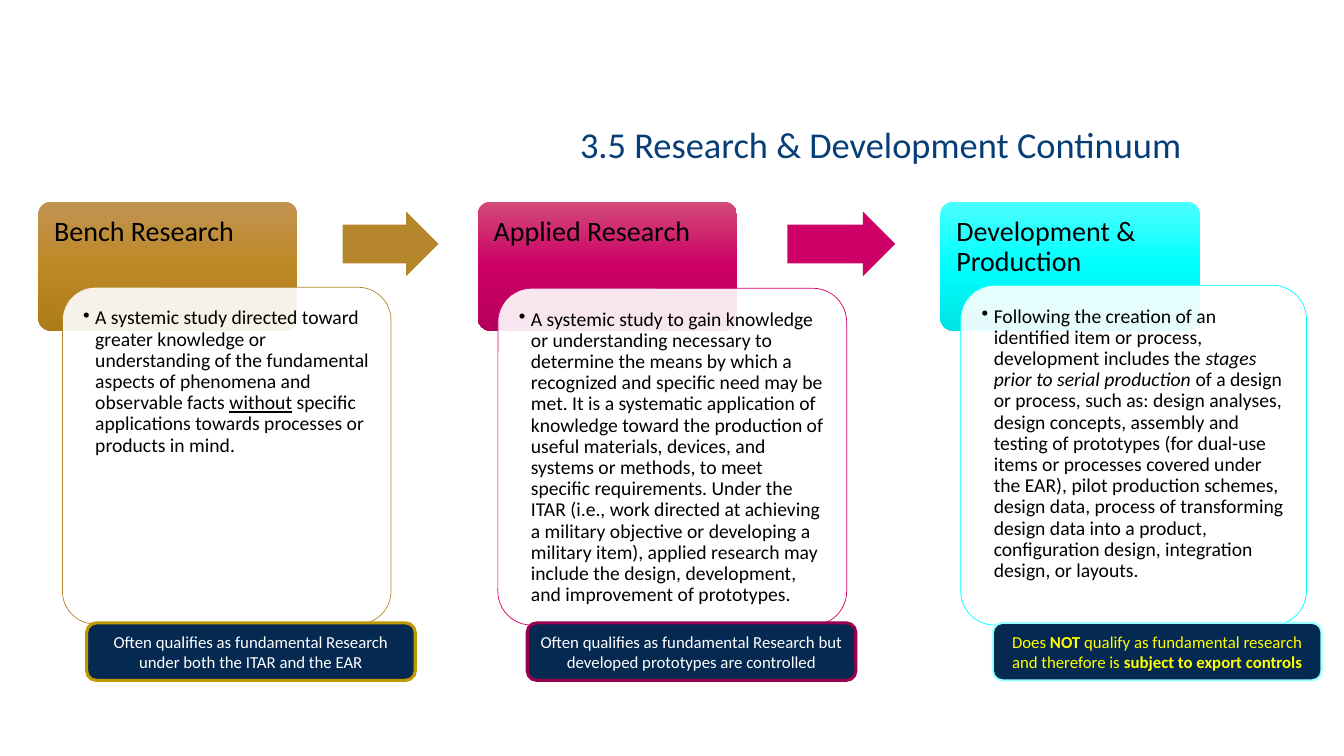
from dataclasses import dataclass
from typing import NamedTuple

from lxml import etree
from pptx import Presentation
from pptx import util as u
from pptx.dml.color import RGBColor
from pptx.enum import shapes, text
from pptx.oxml.ns import qn

SLIDE_W, SLIDE_H = u.Inches(13.33), u.Inches(7.5)
FONT = "Calibri"
BLACK, WHITE, NAVY, BLUE, YELLOW = "000000", "FFFFFF", "052950", "083E78", "FFFF00"
ROUND = shapes.MSO_SHAPE.ROUNDED_RECTANGLE
ARROW = shapes.MSO_SHAPE.RIGHT_ARROW


class Box(NamedTuple):
    """Left, top, width and height in percent of the slide."""
    left: float
    top: float
    width: float
    height: float


class Run(NamedTuple):
    text: str
    style: dict = {}


@dataclass
class Stage:
    title: str
    gradient: tuple[str, str, str]
    accent: str
    header_left: float
    body: Box
    details: list[Run]
    verdict_left: float
    verdict: list[Run]
    verdict_color: str
    verdict_line: str
    verdict_line_width: float
    arrow: tuple[float, float] | None = None


STAGES = [
    Stage(
        "Bench Research", ("C19453", "BD8825", "AE7B1B"), "B6862C",
        2.85, Box(4.65, 38, 24.45, 44.55),
        [Run("A systemic study directed toward greater knowledge or understanding of the "
             "fundamental aspects of phenomena and observable facts "),
         Run("without", {"underline": True}),
         Run(" specific applications towards processes or products in mind.")],
        6.45, [Run("Often qualifies as fundamental Research under both the ITAR and the EAR")],
        WHITE, "BF9900", 2.25, (25.5, 7.13)),
    Stage(
        "Applied Research", ("D34B79", "CC0066", "B5005B"), "CC0066",
        35.55, Box(37.05, 38.13, 25.95, 44.55),
        [Run("A systemic study to gain knowledge or understanding necessary to determine the "
             "means by which a recognized and specific need may be met. It is a systematic "
             "application of knowledge toward the production of useful materials, devices, and "
             "systems or methods, to meet specific requirements. Under the ITAR (i.e., work "
             "directed at achieving a military objective or developing a military item), applied "
             "research may include the design, development, and improvement of prototypes.")],
        39.23, [Run("Often qualifies as fundamental Research but developed prototypes are "
                    "controlled")],
        WHITE, "99004D", 2.25, (58.58, 8.03)),
    Stage(
        "Development & Production", ("4BFFFF", "00FFFF", "00E3E3"), "00FFFF",
        69.98, Box(71.48, 37.73, 25.73, 44.95),
        [Run("Following the creation of an identified item or process, development includes the "),
         Run("stages prior to serial production", {"italic": True}),
         Run(" of a design or process, such as: design analyses, design concepts, assembly and "
             "testing of prototypes (for dual-use items or processes covered under the EAR), "
             "pilot production schemes, design data, process of transforming design data into a "
             "product, configuration design, integration design, or layouts.")],
        73.88, [Run("Does "), Run("NOT", {"bold": True}),
                Run(" qualify as fundamental research and therefore is "),
                Run("subject to export controls", {"bold": True})],
        YELLOW, "99FFFF", 1.5),
]


def rgb(color: str) -> RGBColor:
    return RGBColor.from_string(color)


def place(box: Box) -> tuple[int, int, int, int]:
    return (int(SLIDE_W * box.left / 100), int(SLIDE_H * box.top / 100),
            int(SLIDE_W * box.width / 100), int(SLIDE_H * box.height / 100))


def add_shape(s, kind, box: Box, fill: str, line: str | None = None,
              line_width: float = 0, adjust: tuple[float, ...] = ()):
    sp = s.shapes.add_shape(kind, *place(box))
    sp.shadow.inherit = False
    sp.fill.solid()
    sp.fill.fore_color.rgb = rgb(fill)
    if line:
        sp.line.color.rgb = rgb(line)
        sp.line.width = u.Pt(line_width)
    else:
        sp.line.fill.background()
    for i, value in enumerate(adjust):
        sp.adjustments[i] = value
    return sp


def set_gradient(sp, colors: tuple[str, ...]) -> None:
    old = sp._element.spPr.find(qn("a:solidFill"))
    grad = etree.Element(qn("a:gradFill"), rotWithShape="1")
    stops = etree.SubElement(grad, qn("a:gsLst"))
    for i, color in enumerate(colors):
        stop = etree.SubElement(stops, qn("a:gs"), pos=str(i * 100000 // (len(colors) - 1)))
        etree.SubElement(stop, qn("a:srgbClr"), val=color)
    etree.SubElement(grad, qn("a:lin"), ang="5400000", scaled="0")
    old.getparent().replace(old, grad)


def set_opacity(sp, percent: int) -> None:
    color = sp._element.spPr.find(qn("a:solidFill")).find(qn("a:srgbClr"))
    etree.SubElement(color, qn("a:alpha"), val=str(percent * 1000))


def write(sp, runs: list[Run], size: float, color: str, align=text.PP_ALIGN.LEFT,
          anchor=text.MSO_ANCHOR.TOP, inset: float | None = None,
          spacing: float = 1.0, bullet: bool = False) -> None:
    tf = sp.text_frame
    frame = {"word_wrap": True, "vertical_anchor": anchor}
    if inset is not None:
        sides = ("left", "top", "right", "bottom")
        frame |= {f"margin_{side}": u.Inches(inset) for side in sides}
    for name, value in frame.items():
        setattr(tf, name, value)
    p = tf.paragraphs[0]
    p.alignment, p.line_spacing = align, spacing
    if bullet:
        pPr = p._p.get_or_add_pPr()
        indent = u.Inches(0.12)
        pPr.set("marL", str(indent))
        pPr.set("indent", str(-indent))
        etree.SubElement(pPr, qn("a:buChar"), char="•")
    for run in runs:
        r = p.add_run()
        r.text = run.text
        r.font.color.rgb = rgb(color)
        for name, value in ({"name": FONT, "size": u.Pt(size)} | run.style).items():
            setattr(r.font, name, value)


def draw_stage(s, stage: Stage) -> None:
    header = add_shape(s, ROUND, Box(stage.header_left, 26.67, 19.28, 17.07),
                       stage.accent, adjust=(0.1,))
    set_gradient(header, stage.gradient)
    write(header, [Run(stage.title)], 20, BLACK, inset=0.12, spacing=0.9)
    body = add_shape(s, ROUND, stage.body, WHITE, stage.accent, 0.5, (0.1,))
    set_opacity(body, 90)
    write(body, stage.details, 14, BLACK, inset=0.11, spacing=0.9, bullet=True)
    if stage.arrow:
        left, width = stage.arrow
        add_shape(s, ARROW, Box(left, 28, width, 8.53), stage.accent, adjust=(0.6, 0.5))


def draw_verdict(s, stage: Stage) -> None:
    sp = add_shape(s, ROUND, Box(stage.verdict_left, 82.4, 24.45, 7.6), NAVY,
                   stage.verdict_line, stage.verdict_line_width)
    write(sp, stage.verdict, 12, stage.verdict_color, text.PP_ALIGN.CENTER,
          text.MSO_ANCHOR.MIDDLE)


def main() -> None:
    prs = Presentation()
    prs.slide_width, prs.slide_height = SLIDE_W, SLIDE_H
    s = prs.slides.add_slide(prs.slide_layouts[6])
    for stage in STAGES:
        draw_stage(s, stage)
    title = s.shapes.add_textbox(*place(Box(33.98, 15.47, 63.15, 7.2)))
    write(title, [Run("3.5 Research & Development Continuum")], 26, BLUE, text.PP_ALIGN.CENTER)
    for stage in STAGES:
        draw_verdict(s, stage)
    prs.save("out.pptx")


if __name__ == "__main__":
    main()
